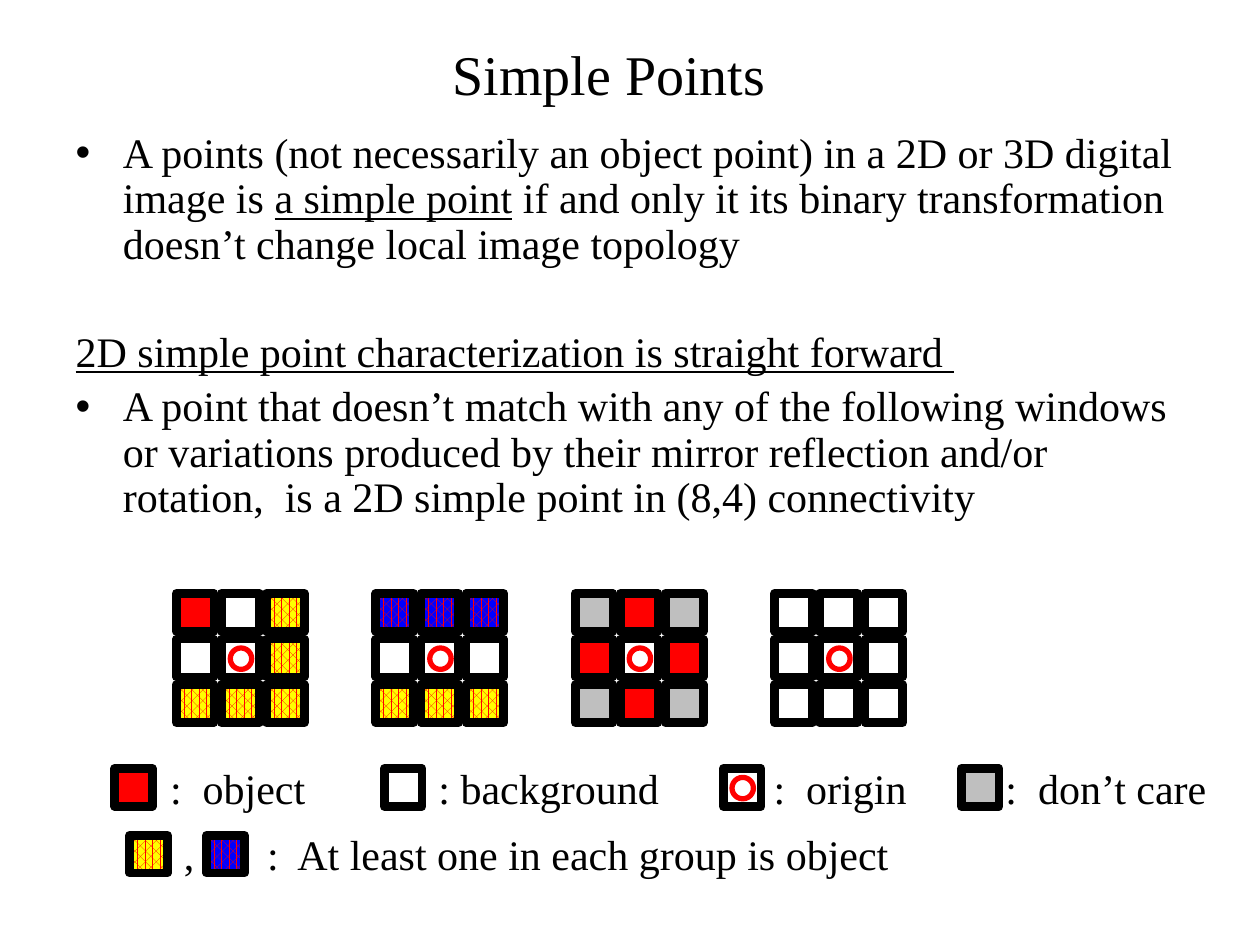
import dataclasses

import pptx
import pptx.dml.color
import pptx.enum.dml
import pptx.enum.shapes
import pptx.enum.text
import pptx.util

RGB = pptx.dml.color.RGBColor.from_string
SHAPE = pptx.enum.shapes.MSO_SHAPE
ANCHOR = pptx.enum.text.MSO_ANCHOR
ALIGN = pptx.enum.text.PP_ALIGN
FIT = pptx.enum.text.MSO_AUTO_SIZE


@dataclasses.dataclass(frozen=True)
class Theme:
    font: str = "Times New Roman"
    ink: str = "000000"
    red: str = "FF0000"
    white: str = "FFFFFF"
    gray: str = "BFBFBF"
    yellow: str = "FFFF00"
    blue: str = "0000FF"
    title_size: int = 32
    text_size: int = 24
    cell_line: int = 5
    ring_line: int = 3


def apply(target, values):
    for name, value in values.items():
        setattr(target, name, value)


class SlideBuilder:
    COLUMNS, ROWS = 100, 75
    CELL = 3
    RING, RING_INSET = 1.7, 0.7

    def __init__(self, prs, theme):
        self.prs, self.theme = prs, theme
        self.s = prs.slides.add_slide(prs.slide_layouts[1])
        self.solid = {"r": theme.red, "w": theme.white, "o": theme.white, "g": theme.gray}
        self.pattern = {"y": theme.yellow, "b": theme.blue}

    def box(self, col, row, cols, rows):
        x, y = self.prs.slide_width / self.COLUMNS, self.prs.slide_height / self.ROWS
        return [round(v) for v in (col * x, row * y, cols * x, rows * y)]

    def place(self, sp, *area):
        apply(sp, dict(zip(("left", "top", "width", "height"), self.box(*area))))

    def run(self, p, text, size, underline=None):
        r = p.add_run()
        r.text = text
        apply(r.font, {"name": self.theme.font, "size": pptx.util.Pt(size), "underline": underline})
        r.font.color.rgb = RGB(self.theme.ink)

    def title(self, text, *area):
        sp = self.s.shapes.title
        self.place(sp, *area)
        tf = sp.text_frame
        apply(tf, {"vertical_anchor": ANCHOR.MIDDLE, "auto_size": FIT.NONE, "word_wrap": True})
        p = tf.paragraphs[0]
        p.alignment = ALIGN.CENTER
        self.run(p, text, self.theme.title_size)

    def body(self, paragraphs, *area):
        sp = self.s.placeholders[1]
        self.place(sp, *area)
        tf = sp.text_frame
        apply(tf, {"vertical_anchor": ANCHOR.TOP, "auto_size": FIT.NONE, "word_wrap": True})
        for i, (bulleted, before, runs) in enumerate(paragraphs):
            p = tf.add_paragraph() if i else tf.paragraphs[0]
            apply(p, {"line_spacing": 0.9, "space_before": pptx.util.Pt(before)})
            if not bulleted:
                pPr = p._p.get_or_add_pPr()
                pPr.set("marL", "0")
                pPr.set("indent", "0")
                pPr.append(pptx.oxml.parse_xml(
                    '<a:buNone xmlns:a="http://schemas.openxmlformats.org/drawingml/2006/main"/>'))
            for text, underline in runs:
                self.run(p, text, self.theme.text_size, underline)

    def shape(self, parent, kind, area, color, width):
        sp = parent.shapes.add_shape(kind, *self.box(*area))
        sp.shadow.inherit = False
        sp.line.color.rgb = RGB(color)
        sp.line.width = pptx.util.Pt(width)
        return sp

    def cell(self, parent, code, col, row):
        theme = self.theme
        area = (col, row, self.CELL, self.CELL)
        fill = self.shape(parent, SHAPE.RECTANGLE, area, theme.ink, theme.cell_line).fill
        if code in self.pattern:
            fill.patterned()
            fill.pattern = pptx.enum.dml.MSO_PATTERN.PERCENT_60
            fill.fore_color.rgb = RGB(theme.red)
            fill.back_color.rgb = RGB(self.pattern[code])
        else:
            fill.solid()
            fill.fore_color.rgb = RGB(self.solid[code])
        if code == "o":
            area = (col + self.RING_INSET, row + self.RING_INSET, self.RING, self.RING)
            self.shape(parent, SHAPE.OVAL, area, theme.red, theme.ring_line).fill.background()

    def window(self, rows, col, row, col_step=3.58, row_step=3.63):
        group = self.s.shapes.add_group_shape()
        for j, codes in enumerate(rows):
            for i, code in enumerate(codes):
                self.cell(group, code, col + i * col_step, row + j * row_step)

    def label(self, text, col, row, cols):
        tf = self.s.shapes.add_textbox(*self.box(col, row, cols, 5)).text_frame
        apply(tf, {"margin_left": 0, "margin_right": 0, "word_wrap": False})
        self.run(tf.paragraphs[0], text, self.theme.text_size)


BODY = [
    (True, 5, [
        ("A points (not necessarily an object point) in a 2D or 3D digital image is ", None),
        ("a simple point", True),
        (" if and only it its binary transformation doesn’t change local image topology", None)]),
    (False, 36, [("2D simple point characterization is straight forward ", True)]),
    (True, 5, [
        ("A point that doesn’t match with any of the following windows or variations produced by "
         "their mirror reflection and/or rotation,  is a 2D simple point in (8,4) connectivity", None)]),
]
WINDOWS = [
    ("rwy", "woy", "yyy"),
    ("bbb", "wow", "yyy"),
    ("grg", "ror", "grg"),
    ("www", "wow", "www"),
]
LEGEND = [
    ("r", 9.1, 60, ":  object", 13.5, 12),
    ("w", 30.5, 60, ": background", 34.8, 18),
    ("o", 57.4, 60, ":  origin", 61.4, 11),
    ("g", 76.3, 60, ":  don’t care", 79.8, 17),
    ("y", 10.3, 65.3, ",", 14.6, 1),
    ("b", 16.4, 65.3, ":  At least one in each group is object", 21.2, 50),
]


def main():
    prs = pptx.Presentation()
    prs.slide_width, prs.slide_height = pptx.util.Inches(10), pptx.util.Inches(7.5)
    slide = SlideBuilder(prs, Theme())
    slide.title("Simple Points", 4.2, 0.8, 88.3, 10)
    slide.body(BODY, 5, 10, 90, 34.2)
    for i, rows in enumerate(WINDOWS):
        slide.window(rows, 14 + i * 15.83, 47.1)
    for code, col, row, text, text_col, cols in LEGEND:
        slide.cell(slide.s, code, col, row + 1)
        slide.label(text, text_col, row, cols)
    prs.save("out.pptx")


if __name__ == "__main__":
    main()
